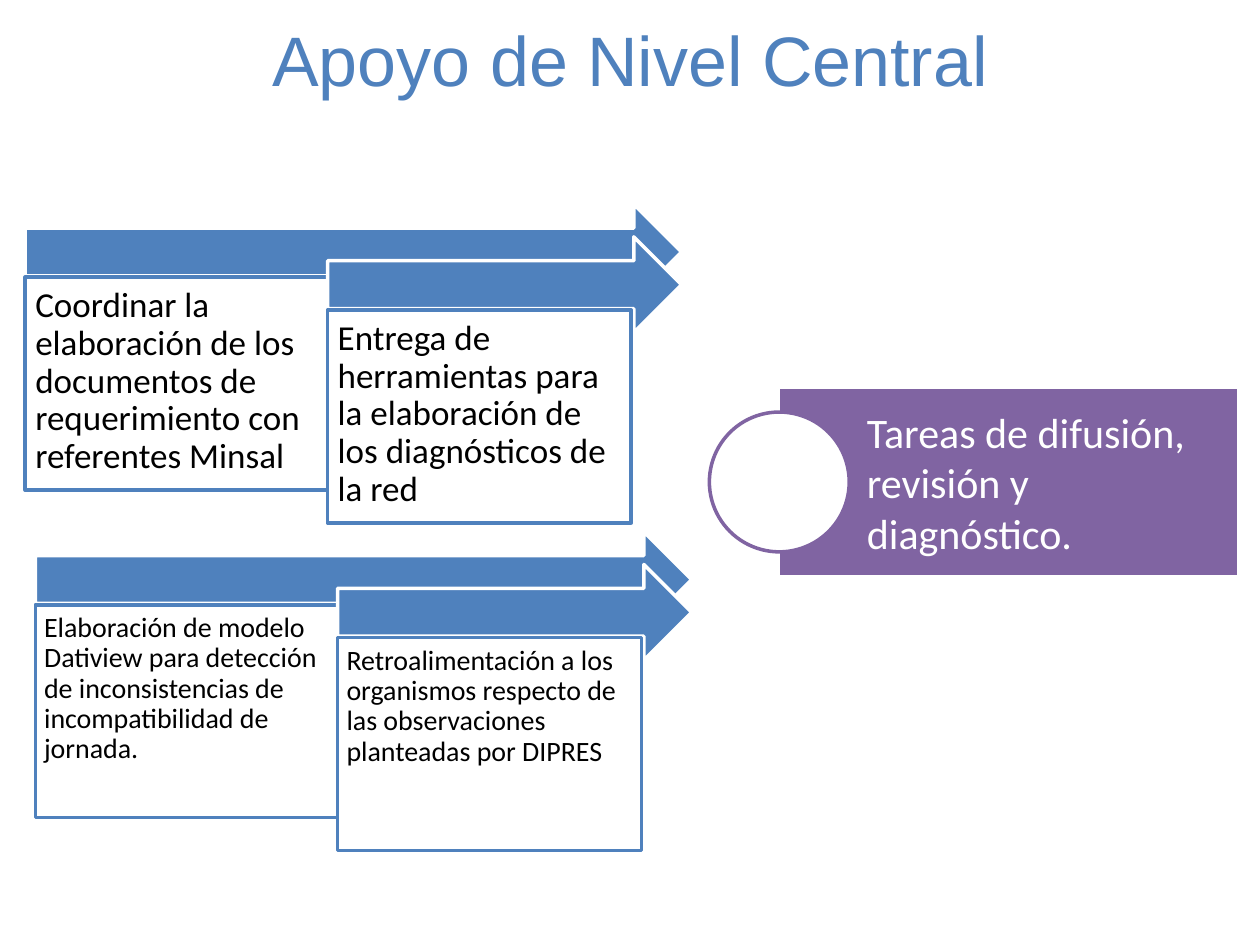
from pptx import Presentation
from pptx.dml.color import RGBColor
from pptx.enum.shapes import MSO_SHAPE
from pptx.enum.text import MSO_ANCHOR, PP_ALIGN
from pptx.util import Emu, Pt

RECTANGLE = MSO_SHAPE.RECTANGLE
ARROW = MSO_SHAPE.RIGHT_ARROW
OVAL = MSO_SHAPE.OVAL
TOP, MIDDLE = MSO_ANCHOR.TOP, MSO_ANCHOR.MIDDLE
LEFT, CENTER = PP_ALIGN.LEFT, PP_ALIGN.CENTER

EMU_PER_PX = 9144
COLORS = {
    "blue": "4F81BD",
    "purple": "8064A2",
    "white": "FFFFFF",
    "black": "000000",
}
STEP_X, STEP_Y = 240, 26
STAGES = [
    (20, 162, 20, 8, [
        "Coordinar la elaboración de los documentos de requerimiento con referentes Minsal",
        "Entrega de herramientas para la elaboración de los diagnósticos de la red",
    ]),
    (28, 422, 16, 7, [
        "Elaboración de modelo Datiview para detección de inconsistencias de incompatibilidad de jornada.",
        "Retroalimentación a los organismos respecto de las observaciones planteadas por DIPRES",
    ]),
]


def px(value):
    return Emu(value * EMU_PER_PX)


def color(name):
    return RGBColor.from_string(COLORS[name])


def add_block(page, kind, place, fill, line):
    block = page.shapes.add_shape(kind, *map(px, place))
    block.shadow.inherit = False
    block.fill.solid()
    block.fill.fore_color.rgb = color(fill)
    block.line.color.rgb = color(line)
    block.line.width = Pt(2)
    return block


def write(box, text, size, ink, insets, font="Calibri", anchor=TOP, align=LEFT, spacing=1.0):
    frame = box.text_frame
    frame.text = text
    frame.word_wrap = True
    frame.vertical_anchor = anchor
    (frame.margin_left, frame.margin_top,
     frame.margin_right, frame.margin_bottom) = map(px, insets)
    para = frame.paragraphs[0]
    para.alignment = align
    para.line_spacing = spacing
    span = para.runs[0]
    span.font.size = Pt(size)
    span.font.name = font
    span.font.color.rgb = color(ink)


def add_title(page, text):
    title = page.shapes.add_textbox(*map(px, (0, 8, 1000, 67)))
    write(title, text, 40, "blue", (10, 5, 10, 5), font="Arial", align=CENTER)


def add_stage(page, left, top, size, inset, texts):
    for index, text in enumerate(texts):
        x, y = left + index * STEP_X, top + index * STEP_Y
        add_block(page, ARROW, (x, y, 521 - index * STEP_X, 76), "blue", "white")
        card = add_block(page, RECTANGLE, (x, y + 58, 241, 169), "white", "blue")
        write(card, text, size, "black", [inset] * 4, spacing=0.9)


def add_outcome(page, text):
    panel = add_block(page, RECTANGLE, (618, 307, 365, 151), "purple", "white")
    write(panel, text, 24, "white", (70, 5, 5, 5), anchor=MIDDLE)
    add_block(page, OVAL, (563, 327, 111, 111), "white", "purple")


def main():
    deck = Presentation()
    deck.slide_width, deck.slide_height = px(1000), px(750)
    page = deck.slides.add_slide(deck.slide_layouts[6])
    add_title(page, "Apoyo de Nivel Central")
    for stage in STAGES:
        add_stage(page, *stage)
    add_outcome(page, "Tareas de difusión, revisión y diagnóstico.")
    deck.save("out.pptx")


if __name__ == "__main__":
    main()
